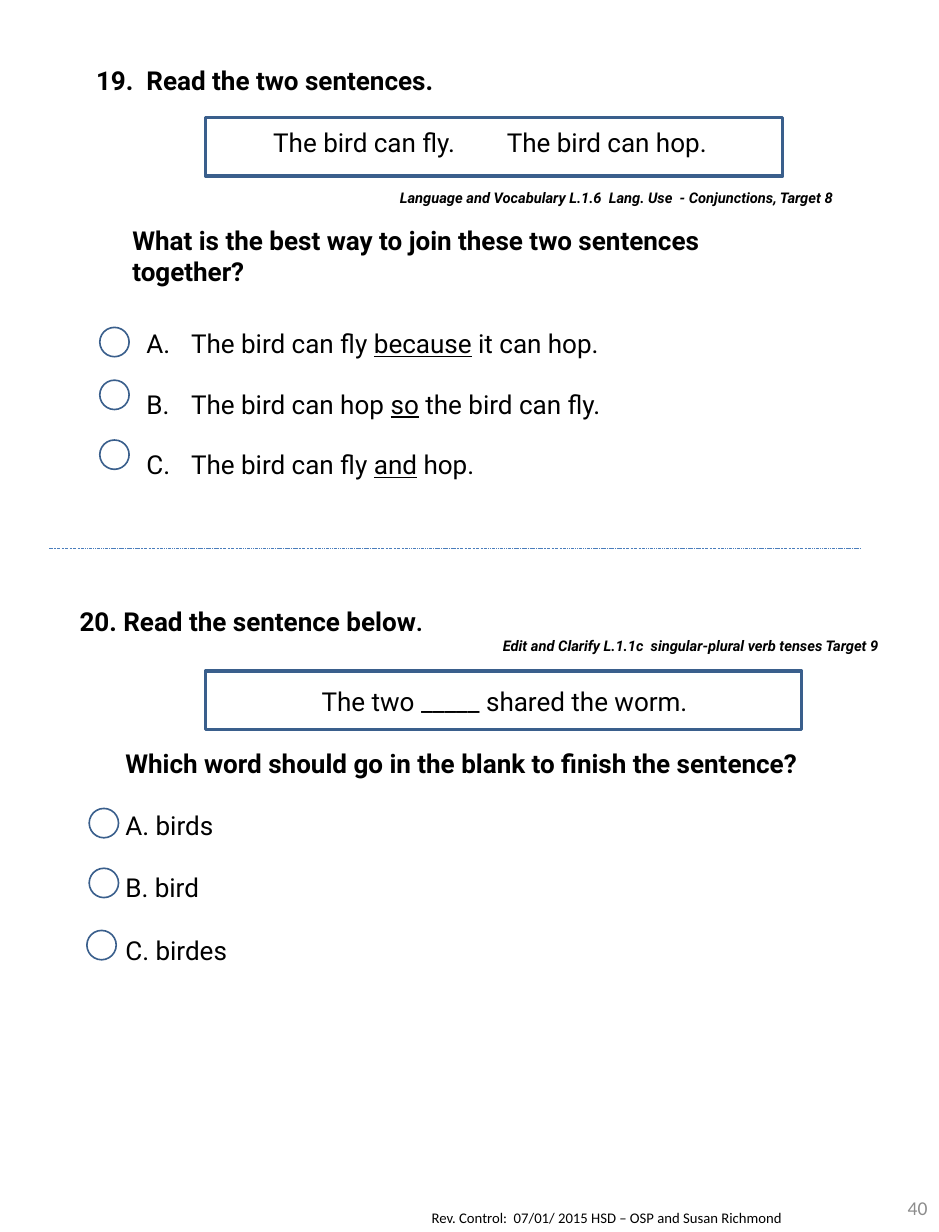
from lxml import etree
from pptx import Presentation
from pptx.dml.color import RGBColor
from pptx.enum import dml, shapes, text
from pptx.oxml import ns
from pptx.util import Inches, Pt

BLACK = RGBColor(0x00, 0x00, 0x00)
WHITE = RGBColor(0xFF, 0xFF, 0xFF)
GRAY = RGBColor(0x8C, 0x8C, 0x8C)
OUTLINE = RGBColor(0x3A, 0x5F, 0x8C)
DIVIDER = RGBColor(0x4B, 0x7E, 0xBC)
CENTER = text.PP_ALIGN.CENTER
RIGHT = text.PP_ALIGN.RIGHT

presentation = Presentation()
presentation.slide_width = Inches(8)
presentation.slide_height = Inches(10.5)
slide = presentation.slides.add_slide(presentation.slide_layouts[6])


def add_text_box(left, top, width, height):
    frame = slide.shapes.add_textbox(
        Inches(left), Inches(top), Inches(width), Inches(height)).text_frame
    frame.word_wrap = True
    return frame


def add_paragraph(frame, words, size=16, bold=False, italic=False, align=None,
                  before=0, margin=0, indent=0, right=0, numbering=None, tab=None,
                  font="Roboto", color=BLACK):
    """Add a paragraph; words between bars are underlined."""
    paragraph = frame.paragraphs[0]
    if paragraph.runs:
        paragraph = frame.add_paragraph()
    properties = paragraph._p.get_or_add_pPr()
    for name, length in (("marL", margin), ("marR", right), ("indent", indent)):
        properties.set(name, str(Inches(length)))
    if numbering:
        style, start = numbering
        bullet = etree.SubElement(properties, ns.qn("a:buAutoNum"), type=style)
        if start > 1:
            bullet.set("startAt", str(start))
    if tab:
        stops = etree.SubElement(properties, ns.qn("a:tabLst"))
        etree.SubElement(stops, ns.qn("a:tab"), pos=str(Inches(tab)), algn="l")
    paragraph.alignment = align
    paragraph.space_before = Pt(before)
    paragraph.font.name = font
    paragraph.font.size = Pt(size)
    paragraph.font.bold = bold
    paragraph.font.italic = italic
    paragraph.font.color.rgb = color
    for position, part in enumerate(words.split("|")):
        run = paragraph.add_run()
        run.text = part
        if position % 2:
            run.font.underline = True
    return paragraph


# Footer and page number
footer = add_text_box(3.58, 10.25, 4, 0.25)
add_paragraph(footer, "Rev. Control:  07/01/ 2015 HSD – OSP and Susan Richmond",
              size=9, font="Calibri")
page_number = add_text_box(7.13, 10.08, 0.87, 0.42)
page_number.vertical_anchor = text.MSO_ANCHOR.MIDDLE
add_paragraph(page_number, "40", size=12, align=RIGHT, font="Calibri", color=GRAY)

# Question 19
question = add_text_box(0.72, 0.5, 6.47, 3.94)
add_paragraph(question, "Read the two sentences.", bold=True,
              margin=0.43, indent=-0.43, numbering=("arabicPeriod", 19))
add_paragraph(question, "The bird can fly.\tThe bird can hop.", before=19,
              indent=1.51, tab=3.33)
add_paragraph(question, "Language and Vocabulary L.1.6  Lang. Use  - Conjunctions, Target 8",
              size=9, bold=True, italic=True, align=RIGHT, before=19)
add_paragraph(question, "What is the best way to join these two sentences together?",
              bold=True, before=11, margin=0.31, right=0.4)
answers = ("The bird can fly |because| it can hop.",
           "The bird can hop |so| the bird can fly.",
           "The bird can fly |and| hop.")
for number, answer in enumerate(answers):
    add_paragraph(question, answer, before=18 if number else 25,
                  margin=0.81, indent=-0.38, numbering=("alphaUcPeriod", 1))

# Question 20
question = add_text_box(0.58, 5.11, 7, 3.48)
heading = add_paragraph(question, "20. Read the sentence below", bold=True)
full_stop = heading.add_run()
full_stop.text = "."
full_stop.font.size = Pt(14)
add_paragraph(question, "Edit and Clarify L.1.1c  singular-plural verb tenses Target 9",
              size=9, bold=True, italic=True, align=RIGHT)
add_paragraph(question, "The two _____ shared the worm.", align=CENTER,
              before=19, margin=0.44)
add_paragraph(question, "Which word should go in the blank to finish the sentence?",
              bold=True, before=19, margin=0.39)
for answer in ("A. birds", "B. bird", "C. birdes"):
    add_paragraph(question, answer, before=19, margin=0.39)

# Answer circles
for left, top in ((0.85, 2.79), (0.85, 3.24), (0.85, 3.75),
                  (0.76, 6.89), (0.76, 7.4), (0.74, 7.93)):
    circle = slide.shapes.add_shape(shapes.MSO_SHAPE.OVAL, Inches(left), Inches(top),
                                    Inches(0.25), Inches(0.25))
    circle.shadow.inherit = False
    circle.fill.solid()
    circle.fill.fore_color.rgb = WHITE
    circle.line.color.rgb = OUTLINE
    circle.line.width = Pt(1)

# Sentence frames
for top, width in ((1, 4.92), (5.72, 5.08)):
    box = slide.shapes.add_shape(shapes.MSO_SHAPE.RECTANGLE, Inches(1.75), Inches(top),
                                 Inches(width), Inches(0.5))
    box.shadow.inherit = False
    box.fill.background()
    box.line.color.rgb = OUTLINE
    box.line.width = Pt(2)

# Divider between the questions
divider = slide.shapes.add_connector(shapes.MSO_CONNECTOR.STRAIGHT, Inches(0.42),
                                     Inches(4.67), Inches(7.33), Inches(4.67))
divider.line.color.rgb = DIVIDER
divider.line.width = Pt(0.25)
divider.line.dash_style = dml.MSO_LINE.DASH_DOT_DOT
etree.SubElement(divider._element.spPr, ns.qn("a:effectLst"))

presentation.save("out.pptx")
